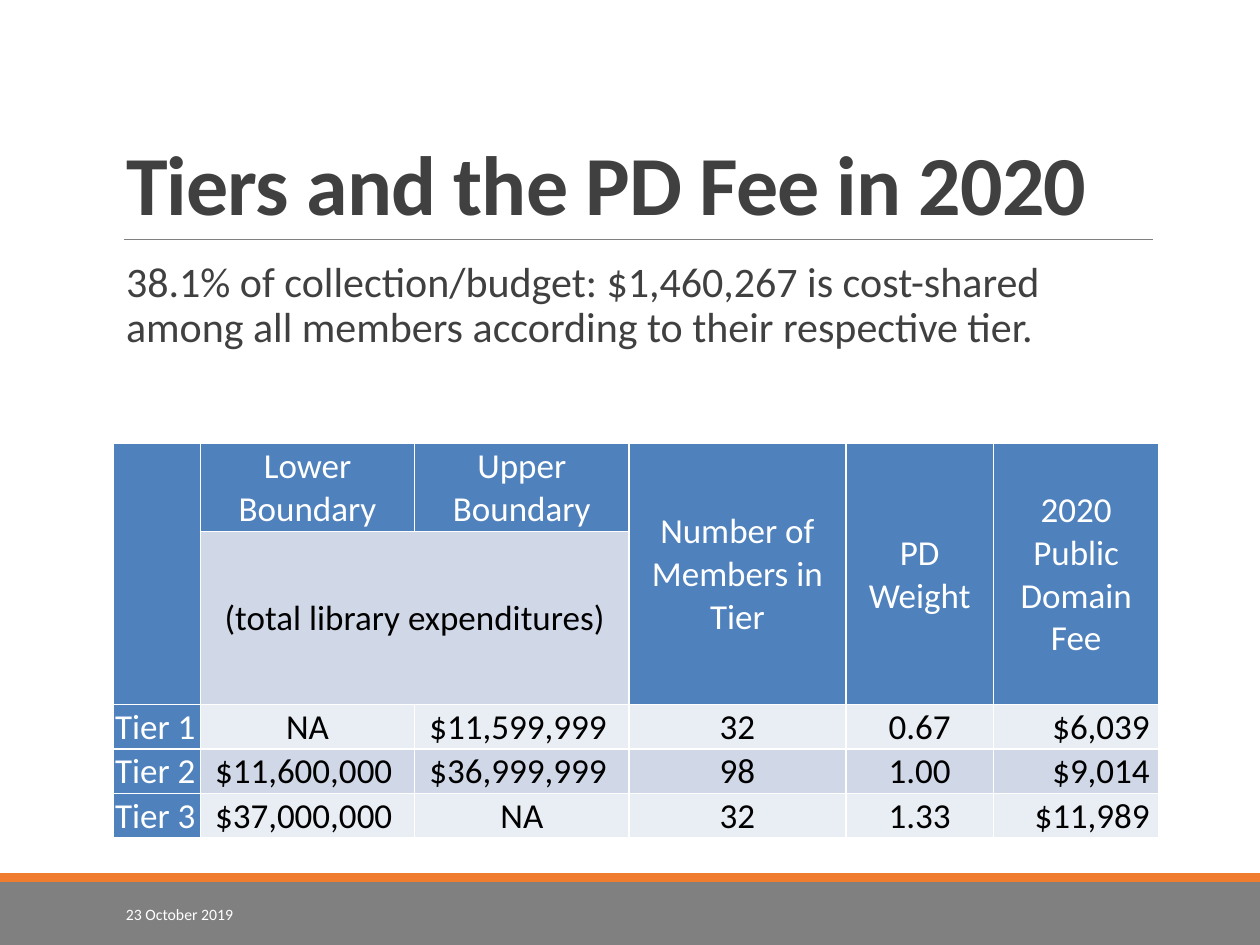
from dataclasses import dataclass

from lxml.etree import SubElement
from pptx import Presentation
from pptx.dml.color import RGBColor
from pptx.enum.shapes import MSO_CONNECTOR, MSO_SHAPE
from pptx.enum.text import MSO_ANCHOR, MSO_AUTO_SIZE, PP_ALIGN
from pptx.oxml.ns import qn
from pptx.util import Cm, Pt

TITLE = "Tiers and the PD Fee in 2020"
BODY = ("38.1% of collection/budget: $1,460,267 is cost-shared among all "
        "members according to their respective tier.")
DATE = "23 October 2019"

ROWS = [
    ["", "Lower Boundary", "Upper Boundary", "Number of Members in Tier",
     "PD Weight", "2020 Public Domain Fee"],
    ["", "(total library expenditures)", "", "", "", ""],
    ["Tier 1", "NA", "$11,599,999", "32", "0.67", "$6,039"],
    ["Tier 2", "$11,600,000", "$36,999,999", "98", "1.00", "$9,014"],
    ["Tier 3", "$37,000,000", "NA", "32", "1.33", "$11,989"],
]
MERGES = [((0, column), (1, column)) for column in (0, 3, 4, 5)] + [((1, 1), (1, 2))]
COLUMN_WIDTHS = [1.75, 4.32, 4.32, 4.37, 2.98, 3.33]
ROW_HEIGHTS = [1.77, 3.48, 0.9, 0.9, 0.9]
FEE_COLUMN = len(COLUMN_WIDTHS) - 1


@dataclass(frozen=True)
class Theme:
    font: str = "Calibri"
    text: str = "404040"
    black: str = "000000"
    white: str = "FFFFFF"
    grey: str = "808080"
    orange: str = "EF7C2F"
    blue: str = "4F81BD"
    bands: tuple = ("E9EDF4", "D0D8E8")
    title_size: int = 48
    body_size: int = 24
    table_size: int = 20
    date_size: int = 9


THEME = Theme()


def place(shape, left, top, width, height):
    shape.left, shape.top = Cm(left), Cm(top)
    shape.width, shape.height = Cm(width), Cm(height)


def style(para, size, color, align=PP_ALIGN.LEFT, bold=False):
    para.alignment = align
    para.font.name = THEME.font
    para.font.size = Pt(size)
    para.font.bold = bold
    para.font.color.rgb = RGBColor.from_string(color)


def add_bar(page, top, height, color):
    bar = page.shapes.add_shape(MSO_SHAPE.RECTANGLE, 0, Cm(top), Cm(25.4), Cm(height))
    bar.shadow.inherit = False
    bar.fill.solid()
    bar.fill.fore_color.rgb = RGBColor.from_string(color)
    bar.line.fill.background()


def add_rule(page):
    rule = page.shapes.add_connector(
        MSO_CONNECTOR.STRAIGHT, Cm(2.49), Cm(4.83), Cm(23.24), Cm(4.83))
    rule.line.color.rgb = RGBColor.from_string(THEME.grey)
    rule.line.width = Pt(0.5)
    SubElement(rule._element.spPr, qn("a:effectLst"))


def fill_title(title):
    place(title, 2.29, 0.79, 20.95, 4.03)
    frame = title.text_frame
    frame.text = TITLE
    frame.auto_size = MSO_AUTO_SIZE.NONE
    frame.vertical_anchor = MSO_ANCHOR.BOTTOM
    para = frame.paragraphs[0]
    para.line_spacing = 0.85
    style(para, THEME.title_size, THEME.text, bold=True)
    para.runs[0]._r.get_or_add_rPr().set("spc", "-50")


def fill_body(body):
    place(body, 2.29, 5.13, 20.95, 11.18)
    frame = body.text_frame
    frame.text = BODY
    frame.auto_size = MSO_AUTO_SIZE.NONE
    frame.margin_left = frame.margin_right = 0
    para = frame.paragraphs[0]
    para.line_spacing = 0.9
    para.space_before, para.space_after = Pt(0), Pt(2)
    properties = para._p.get_or_add_pPr()
    properties.set("marL", str(Cm(0.25)))
    properties.set("indent", "0")
    SubElement(properties, qn("a:buNone"))
    style(para, THEME.body_size, THEME.text)


def add_borders(cell):
    properties = cell._tc.get_or_add_tcPr()
    for side in ("lnL", "lnR", "lnT", "lnB"):
        line = SubElement(properties, qn(f"a:{side}"), w=str(Pt(1)))
        fill = SubElement(line, qn("a:solidFill"))
        SubElement(fill, qn("a:srgbClr"), val=THEME.white)


def format_cell(cell, row, column):
    text = ROWS[row][column]
    is_header = column == 0 or row == 0 or (row == 1 and column > 2)
    is_fee = row > 1 and column == FEE_COLUMN
    cell.text = text
    cell.margin_left = cell.margin_top = Cm(0.03)
    cell.margin_right = Cm(0.18 if text.startswith("$") else 0.03)
    cell.margin_bottom = 0
    cell.vertical_anchor = MSO_ANCHOR.TOP if is_fee else MSO_ANCHOR.MIDDLE
    add_borders(cell)
    cell.fill.solid()
    cell.fill.fore_color.rgb = RGBColor.from_string(
        THEME.blue if is_header else THEME.bands[row % 2])
    if is_fee:
        align = PP_ALIGN.RIGHT
    else:
        align = PP_ALIGN.LEFT if column == 0 else PP_ALIGN.CENTER
    style(cell.text_frame.paragraphs[0], THEME.table_size,
          THEME.white if is_header else THEME.black, align)


def add_tier_table(page):
    table = page.shapes.add_table(
        len(ROWS), len(COLUMN_WIDTHS), Cm(2.29), Cm(8.94),
        Cm(sum(COLUMN_WIDTHS)), Cm(sum(ROW_HEIGHTS))).table
    for column, width in zip(table.columns, COLUMN_WIDTHS):
        column.width = Cm(width)
    for row, height in zip(table.rows, ROW_HEIGHTS):
        row.height = Cm(height)
    for row in range(len(ROWS)):
        for column in range(len(COLUMN_WIDTHS)):
            format_cell(table.cell(row, column), row, column)
    for first, last in MERGES:
        table.cell(*first).merge(table.cell(*last))


def add_date(page):
    box = page.shapes.add_textbox(Cm(2.29), Cm(17.93), Cm(5.16), Cm(1.02))
    frame = box.text_frame
    frame.word_wrap = True
    frame.vertical_anchor = MSO_ANCHOR.MIDDLE
    frame.text = DATE
    style(frame.paragraphs[0], THEME.date_size, THEME.white)


def main():
    deck = Presentation()
    deck.slide_width, deck.slide_height = Cm(25.4), Cm(19.05)
    page = deck.slides.add_slide(deck.slide_layouts[1])
    add_bar(page, 17.78, 1.27, THEME.grey)
    add_bar(page, 17.6, 0.18, THEME.orange)
    add_rule(page)
    fill_title(page.shapes.title)
    fill_body(page.placeholders[1])
    add_tier_table(page)
    add_date(page)
    deck.save("out.pptx")


if __name__ == "__main__":
    main()
